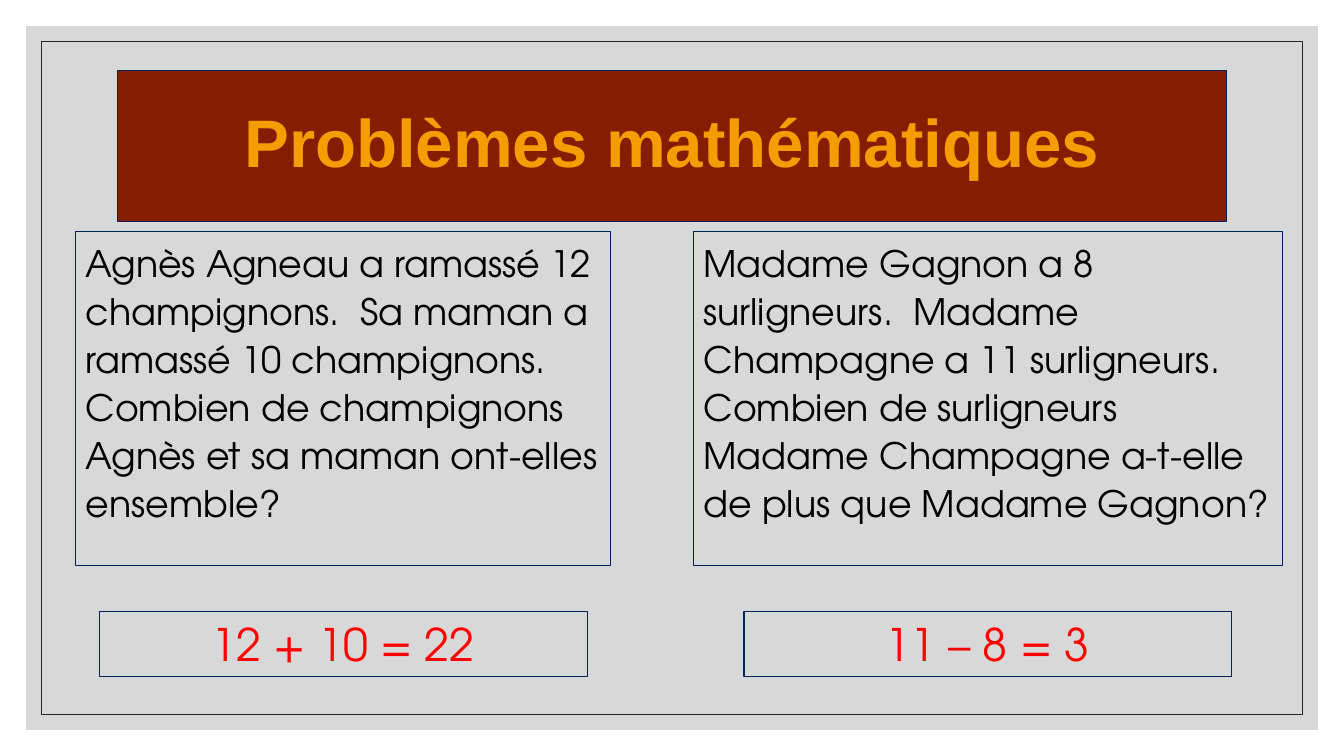
from lxml import etree
from pptx import Presentation
from pptx.dml.color import RGBColor
from pptx.enum import shapes, text
from pptx.oxml import ns
from pptx.util import Pt

WIDE, HIGH = 960, 540
SANS, ROUND = "Arial", "TeX Gyre Adventor"
HUES = {"panel": "BFBFBF", "frame": "262626", "banner": "851D00", "edge": "002060",
        "title": "F49D00", "body": "000000", "answer": "FF0000"}
TASKS = [
    ((54, 165.6, 382.3, 238.3),
     "Agnès Agneau a ramassé 12 champignons.  Sa maman a ramassé 10 champignons. "
     "Combien de champignons Agnès et sa maman ont-elles ensemble?",
     "12 + 10 = 22"),
    ((495.4, 165.6, 420.5, 238.3),
     "Madame Gagnon a 8 surligneurs.  Madame Champagne a 11 surligneurs.  "
     "Combien de surligneurs Madame Champagne a-t-elle de plus que Madame Gagnon?",
     "11 – 8 = 3"),
]


def hue(name):
    """Return the named colour."""
    return RGBColor.from_string(HUES[name])


def paint(shape, fill=None, line=None, width=0.75):
    """Set the fill and outline of a shape."""
    if fill:
        shape.fill.solid()
        shape.fill.fore_color.rgb = hue(fill)
    else:
        shape.fill.background()
    if line:
        shape.line.color.rgb = hue(line)
        shape.line.width = Pt(width)
    else:
        shape.line.fill.background()


def write(shape, words, font, size, color, bold=False, align=text.PP_ALIGN.CENTER,
          anchor=text.MSO_ANCHOR.TOP, space=1.0, before=0):
    """Fill a shape with one formatted paragraph."""
    frame = shape.text_frame
    frame.word_wrap = True
    frame.auto_size = text.MSO_AUTO_SIZE.NONE
    frame.vertical_anchor = anchor
    para = frame.paragraphs[0]
    para.alignment = align
    para.line_spacing = space
    para.space_before = Pt(before)
    run = para.add_run()
    run.text = words
    run.font.name = font
    run.font.size = Pt(size)
    run.font.bold = bold
    run.font.color.rgb = hue(color)


def inset(slide, gap):
    """Add a rectangle at an equal gap from every slide edge."""
    box = [Pt(v) for v in (gap, gap, WIDE - 2 * gap, HIGH - 2 * gap)]
    shape = slide.shapes.add_shape(shapes.MSO_SHAPE.RECTANGLE, *box)
    shape.shadow.inherit = False
    return shape


def backdrop(slide):
    """Draw the translucent panel and its thin frame."""
    panel = inset(slide, 18.7)
    paint(panel, fill="panel")
    tint = panel.element.spPr.find(".//" + ns.qn("a:srgbClr"))
    etree.SubElement(tint, ns.qn("a:alpha"), val="60000")
    paint(inset(slide, 29.4), line="frame", width=0.5)


def banner(slide, box):
    """Place the title above the backdrop."""
    title = slide.shapes.title
    title.left, title.top, title.width, title.height = [Pt(v) for v in box]
    title.element.getparent().append(title.element)
    paint(title, "banner", "edge")
    write(title, "Problèmes mathématiques", SANS, 48, "title", bold=True,
          anchor=text.MSO_ANCHOR.MIDDLE, space=0.9)


def task(slide, box, words, answer):
    """Place a problem in its box and the answer centred below."""
    left, top, width, height = box
    problem = slide.shapes.add_textbox(*[Pt(v) for v in box])
    paint(problem, line="edge")
    write(problem, words, ROUND, 26, "body", align=text.PP_ALIGN.LEFT,
          space=1.1, before=9)
    span = 348.4
    place = (left + (width - span) / 2, top + height + 33.2, span, 46)
    result = slide.shapes.add_textbox(*[Pt(v) for v in place])
    paint(result, line="edge")
    write(result, answer, ROUND, 32, "answer")


def main():
    """Build and save the slide."""
    deck = Presentation()
    deck.slide_width, deck.slide_height = Pt(WIDE), Pt(HIGH)
    slide = deck.slides.add_slide(deck.slide_layouts[5])
    backdrop(slide)
    banner(slide, (84, 50.4, 792, 108))
    for box, words, answer in TASKS:
        task(slide, box, words, answer)
    deck.save("out.pptx")


if __name__ == "__main__":
    main()
